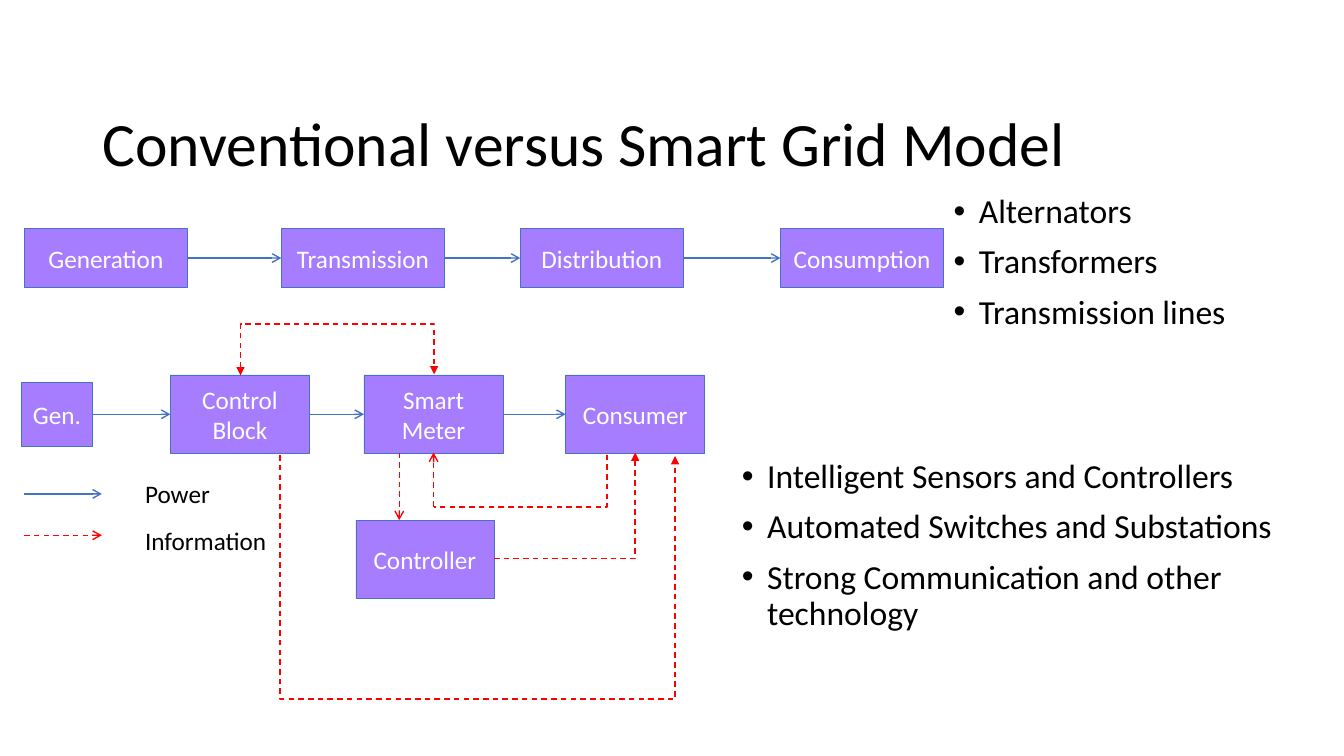
from dataclasses import dataclass
from itertools import pairwise

from lxml.etree import SubElement
from pptx import Presentation
from pptx.dml.color import RGBColor
from pptx.enum.dml import MSO_LINE
from pptx.enum.shapes import MSO_CONNECTOR, MSO_SHAPE
from pptx.enum.text import MSO_ANCHOR, MSO_AUTO_SIZE, PP_ALIGN
from pptx.oxml.ns import qn
from pptx.util import Emu, Inches, Pt

WIDE, HIGH = Inches(13.33), Inches(7.5)
COLS, ROWS = 133.3, 75  # grid cells across and down the slide


@dataclass(frozen=True)
class Theme:
    font: str = "Calibri"
    ink: RGBColor = RGBColor(0, 0, 0)
    pale: RGBColor = RGBColor(255, 255, 255)
    fill: RGBColor = RGBColor(0xA7, 0x7D, 0xFF)
    power: RGBColor = RGBColor(0x44, 0x72, 0xC4)
    info: RGBColor = RGBColor(0xFF, 0, 0)
    title: int = 44
    body: int = 24
    label: int = 18
    edge: float = 0.5
    wire: float = 1


@dataclass(frozen=True)
class Box:
    text: str
    x: float
    y: float
    w: float
    h: float


@dataclass(frozen=True)
class Wire:
    """Ends are given before the turn; bend is a share of the width."""
    x1: float
    y1: float
    x2: float
    y2: float
    info: bool = True
    head: str = ""
    tail: str = "arrow"
    turn: int = 0
    kind: str = "line"
    bend: float = 0


LOOK = Theme()

# Conventional chain and smart grid chain
CHAIN = [Box(name, x, 22.7, 16.2, 5.8) for name, x in (
    ("Generation", 2.4), ("Transmission", 27.9),
    ("Distribution", 51.6), ("Consumption", 77.4))]
SMART = [Box("Gen.", 2.1, 37.9, 7.1, 6.4)] + [
    Box(name, x, 37.2, 13.8, 7.8) for name, x in (
        ("Control Block", 16.9), ("Smart Meter", 36.1), ("Consumer", 56.1))]
CONTROL = Box("Controller", 35.3, 51.6, 13.7, 7.8)

# Information paths
PATHS = [
    Wire(47.4, 25.6, 47.3, 64.8, tail="triangle", turn=270,
         kind="bentConnector3", bend=246),
    Wire(33.5, 46.8, 33.4, 27.6, head="triangle", tail="triangle", turn=90,
         kind="bentConnector3", bend=52),
    Wire(43, 50.3, 60.2, 45.1, tail="", turn=180, kind="bentConnector3"),
    Wire(43, 50.3, 43, 44.9),
    Wire(39.6, 44.9, 39.6, 51.6),
    Wire(49, 55.4, 63, 44.9, tail="triangle", kind="bentConnector2"),
]

# Legend and bullet lists
KEYS = [Wire(2.4, 49, 10.1, 49, info=False), Wire(2.4, 53.1, 10.1, 53.1)]
NAMES = [Box("Power", 13.4, 47, 8.6, 4), Box("Information", 13.4, 51.6, 14.3, 4)]
LISTS = [
    Box("Alternators\nTransformers\nTransmission lines", 93.6, 18.8, 37.9, 20.1),
    Box("Intelligent Sensors and Controllers\n"
        "Automated Switches and Substations\n"
        "Strong Communication and other technology", 72.6, 45.1, 59.5, 20),
]
TITLE = Box("Conventional versus Smart Grid Model", 9.2, 10.6, 115, 7.9)


def col(n: float) -> Emu:
    return Emu(round(WIDE * n / COLS))


def row(n: float) -> Emu:
    return Emu(round(HIGH * n / ROWS))


def area(box: Box) -> tuple[Emu, Emu, Emu, Emu]:
    return col(box.x), row(box.y), col(box.w), row(box.h)


def style(para, size: int, ink: RGBColor) -> None:
    para.font.name = LOOK.font
    para.font.size = Pt(size)
    para.font.color.rgb = ink


def draw_box(slide, box: Box) -> None:
    shape = slide.shapes.add_shape(MSO_SHAPE.RECTANGLE, *area(box))
    shape.shadow.inherit = False
    shape.fill.solid()
    shape.fill.fore_color.rgb = LOOK.fill
    shape.line.color.rgb = LOOK.power
    shape.line.width = Pt(LOOK.edge)
    frame = shape.text_frame
    frame.word_wrap = True
    frame.vertical_anchor = MSO_ANCHOR.MIDDLE
    para = frame.paragraphs[0]
    para.text = box.text
    para.alignment = PP_ALIGN.CENTER
    style(para, LOOK.label, LOOK.pale)


def draw_text(slide, box: Box, size: int, wrap: bool = True,
              bullet: bool = False, middle: bool = False) -> None:
    frame = slide.shapes.add_textbox(*area(box)).text_frame
    frame.word_wrap = wrap
    if not wrap:
        frame.auto_size = MSO_AUTO_SIZE.SHAPE_TO_FIT_TEXT
    if middle:
        frame.vertical_anchor = MSO_ANCHOR.MIDDLE
    for i, line in enumerate(box.text.split("\n")):
        para = frame.add_paragraph() if i else frame.paragraphs[0]
        para.text = line
        if i:
            para.space_before = Pt(10)
        if wrap:
            para.line_spacing = 0.9
        if bullet:
            props = para._p.get_or_add_pPr()
            props.set("marL", str(Inches(0.25)))
            props.set("indent", str(-Inches(0.25)))
            SubElement(props, qn("a:buFont"), typeface="Arial")
            SubElement(props, qn("a:buChar"), char="•")
        style(para, size, LOOK.ink)


def draw_wire(slide, wire: Wire) -> None:
    bent = wire.kind != "line"
    form = MSO_CONNECTOR.ELBOW if bent else MSO_CONNECTOR.STRAIGHT
    link = slide.shapes.add_connector(
        form, col(wire.x1), row(wire.y1), col(wire.x2), row(wire.y2))
    link.line.color.rgb = LOOK.info if wire.info else LOOK.power
    link.line.width = Pt(LOOK.wire)
    if wire.info:
        link.line.dash_style = MSO_LINE.DASH
    props = link._element.spPr
    if bent:
        props.find(qn("a:xfrm")).set("rot", str(wire.turn * 60000))
        geom = props.find(qn("a:prstGeom"))
        geom.set("prst", wire.kind)
        if wire.kind == "bentConnector3":
            SubElement(geom.find(qn("a:avLst")), qn("a:gd"), name="adj1",
                       fmla=f"val {round(wire.bend * 100000)}")
    line = props.find(qn("a:ln"))
    for tag, tip in (("a:headEnd", wire.head), ("a:tailEnd", wire.tail)):
        if tip:
            SubElement(line, qn(tag), type=tip)
    SubElement(props, qn("a:effectLst"))


def main() -> None:
    deck = Presentation()
    deck.slide_width, deck.slide_height = WIDE, HIGH
    slide = deck.slides.add_slide(deck.slide_layouts[6])

    # Title and lists
    draw_text(slide, TITLE, LOOK.title, middle=True)
    for box in LISTS:
        draw_text(slide, box, LOOK.body, bullet=True)

    # Boxes, with power arrows from each to the next
    for box in CHAIN + SMART + [CONTROL]:
        draw_box(slide, box)
    for chain in (CHAIN, SMART):
        for a, b in pairwise(chain):
            mid = a.y + a.h / 2
            draw_wire(slide, Wire(a.x + a.w, mid, b.x, mid, info=False))

    # Information paths and legend
    for wire in PATHS + KEYS:
        draw_wire(slide, wire)
    for box in NAMES:
        draw_text(slide, box, LOOK.label, wrap=False)

    deck.save("out.pptx")


if __name__ == "__main__":
    main()
